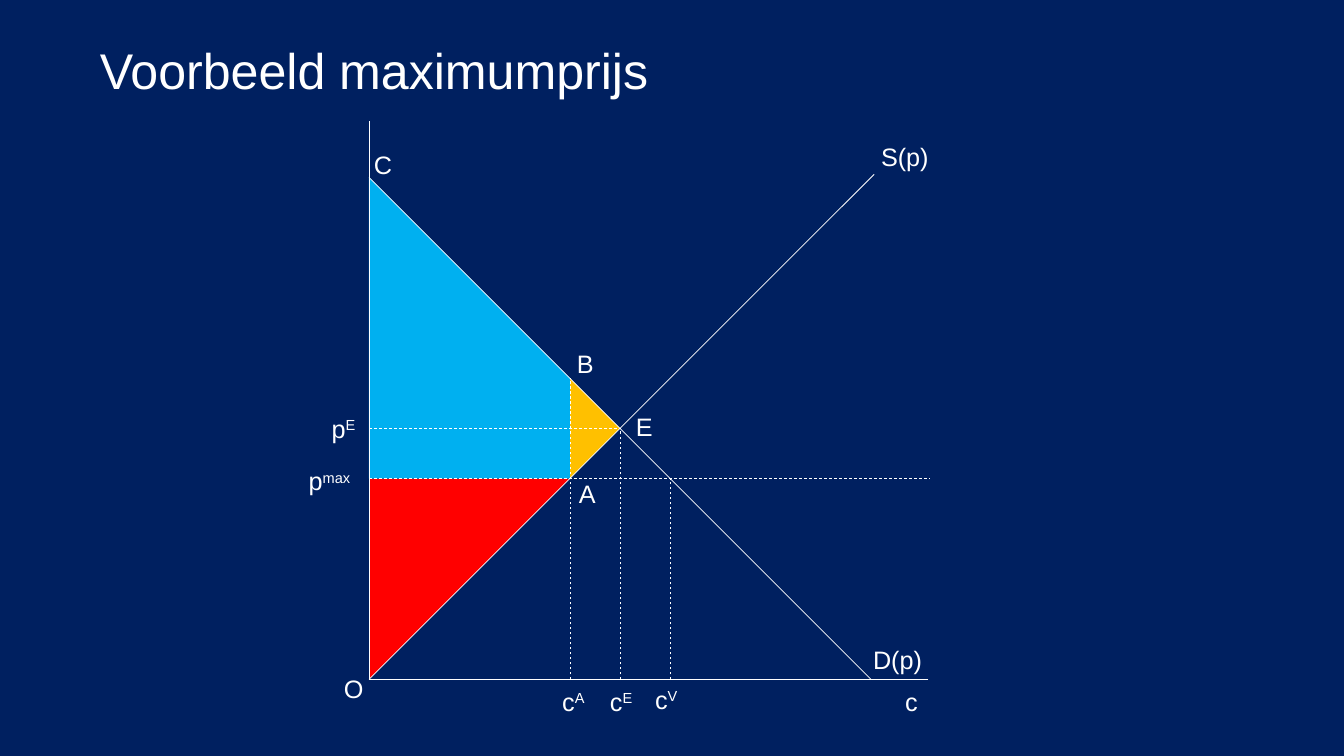
"""Build a slide on a maximum price in a supply and demand diagram."""
import math

import lxml.etree
import pptx
import pptx.dml.color
import pptx.enum.dml
import pptx.enum.shapes
import pptx.enum.text
import pptx.oxml.ns
import pptx.util

COLOURS = {
    "background": "002060",
    "white": "FFFFFF",
    "consumer": "00B0F0",
    "producer": "FF0000",
    "loss": "FFC000",
}
ORIGIN_LEFT, ORIGIN_TOP = 3.66, 6.74
UNIT = 4.98 / 10
LABEL_HEIGHT = 0.4


def point(column, row):
    """Turn a position in the diagram into slide coordinates."""
    return (pptx.util.Inches(ORIGIN_LEFT + column * UNIT),
            pptx.util.Inches(ORIGIN_TOP - row * UNIT))


def write(frame, text, superscript="", size=18, wrap=True):
    """Fill a text frame with text and an optional superscript."""
    frame.word_wrap = wrap
    paragraph = frame.paragraphs[0]
    paragraph.alignment = pptx.enum.text.PP_ALIGN.LEFT
    for content in filter(None, (text, superscript)):
        run = paragraph.add_run()
        run.text = content
        run.font.name = "Arial"
        run.font.size = pptx.util.Pt(size)
        run.font.color.rgb = pptx.dml.color.RGBColor.from_string(COLOURS["white"])
    if superscript:
        run.font._element.set("baseline", "30000")
    return paragraph


presentation = pptx.Presentation()
presentation.slide_width = pptx.util.Inches(13.33)
presentation.slide_height = pptx.util.Inches(7.5)
slide = presentation.slides.add_slide(presentation.slide_layouts[5])
slide.background.fill.solid()
slide.background.fill.fore_color.rgb = pptx.dml.color.RGBColor.from_string(COLOURS["background"])

title = slide.shapes.title
title.left, title.top = pptx.util.Inches(0.89), 0
title.width, title.height = pptx.util.Inches(11.5), pptx.util.Inches(1.45)
title.text_frame.auto_size = pptx.enum.text.MSO_AUTO_SIZE.NONE
title.text_frame.vertical_anchor = pptx.enum.text.MSO_ANCHOR.MIDDLE
write(title.text_frame, "Voorbeeld maximumprijs", size=35.8).line_spacing = 0.9

triangle = pptx.enum.shapes.MSO_SHAPE.RIGHT_TRIANGLE
rectangle = pptx.enum.shapes.MSO_SHAPE.RECTANGLE
loss_side = math.sqrt(2)
areas = [
    (triangle, 4 - loss_side / 2, 5 + loss_side / 2, loss_side, loss_side, 225, "loss"),
    (triangle, 0, 4, 4, 4, 90, "producer"),
    (rectangle, 0, 6, 4, 2, 0, "consumer"),
    (triangle, 0, 10, 4, 4, 0, "consumer"),
]
for kind, column, row, columns, rows, rotation, colour in areas:
    area = slide.shapes.add_shape(kind, *point(column, row),
                                  pptx.util.Inches(columns * UNIT),
                                  pptx.util.Inches(rows * UNIT))
    area.rotation = rotation
    area.shadow.inherit = False
    area.fill.solid()
    area.fill.fore_color.rgb = pptx.dml.color.RGBColor.from_string(COLOURS[colour])
    area.line.fill.background()

lines = [
    ((0, 11.12), (0, 0), False),
    ((11.14, 0), (0, 0), False),
    ((0, 10), (10, 0), False),
    ((0, 0), (10.06, 10.06), False),
    ((0, 4), (11.16, 4), True),
    ((4, 0), (4, 6), True),
    ((0, 5), (5, 5), True),
    ((5, 0), (5, 5), True),
    ((6, 0), (6, 4), True),
]
for start, end, dashed in lines:
    connector = slide.shapes.add_connector(
        pptx.enum.shapes.MSO_CONNECTOR.STRAIGHT, *point(*start), *point(*end))
    connector.line.width = pptx.util.Pt(0.5)
    connector.line.color.rgb = pptx.dml.color.RGBColor.from_string(COLOURS["white"])
    if dashed:
        connector.line.dash_style = pptx.enum.dml.MSO_LINE.DASH
    lxml.etree.SubElement(connector._element.spPr, pptx.oxml.ns.qn("a:effectLst"))

labels = [
    ("p", "max", -1.4, 4.36, 0.84, True),
    ("p", "E", -0.94, 5.4, 0.84, True),
    ("c", "", 10.48, -0.04, 0.31, True),
    ("S(p)", "", 10, 10.82, 0.8, True),
    ("D(p)", "", 9.84, 0.8, 0.78, True),
    ("O", "", -0.7, 0.22, 0.4, False),
    ("A", "", 3.98, 4.1, 0.37, False),
    ("B", "", 3.94, 6.69, 0.38, False),
    ("C", "", -0.1, 10.66, 0.38, False),
    ("E", "", 5.12, 5.44, 0.37, False),
    ("c", "A", 3.65, -0.04, 0.79, True),
    ("c", "E", 4.6, -0.04, 0.79, True),
    ("c", "V", 5.5, 0, 0.79, True),
]
for text, superscript, column, row, width, wrap in labels:
    label = slide.shapes.add_textbox(*point(column, row), pptx.util.Inches(width),
                                     pptx.util.Inches(LABEL_HEIGHT))
    label.text_frame.auto_size = pptx.enum.text.MSO_AUTO_SIZE.SHAPE_TO_FIT_TEXT
    write(label.text_frame, text, superscript, wrap=wrap)

presentation.save("out.pptx")
